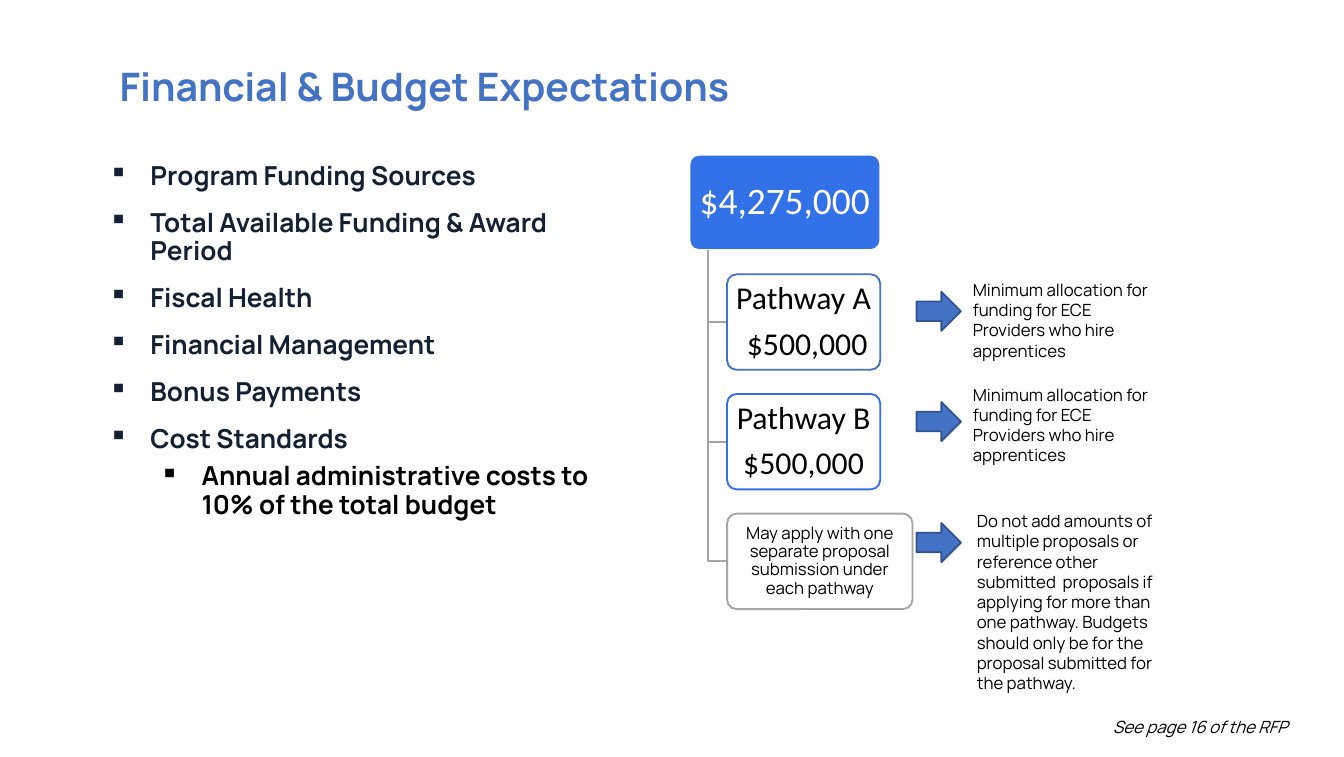
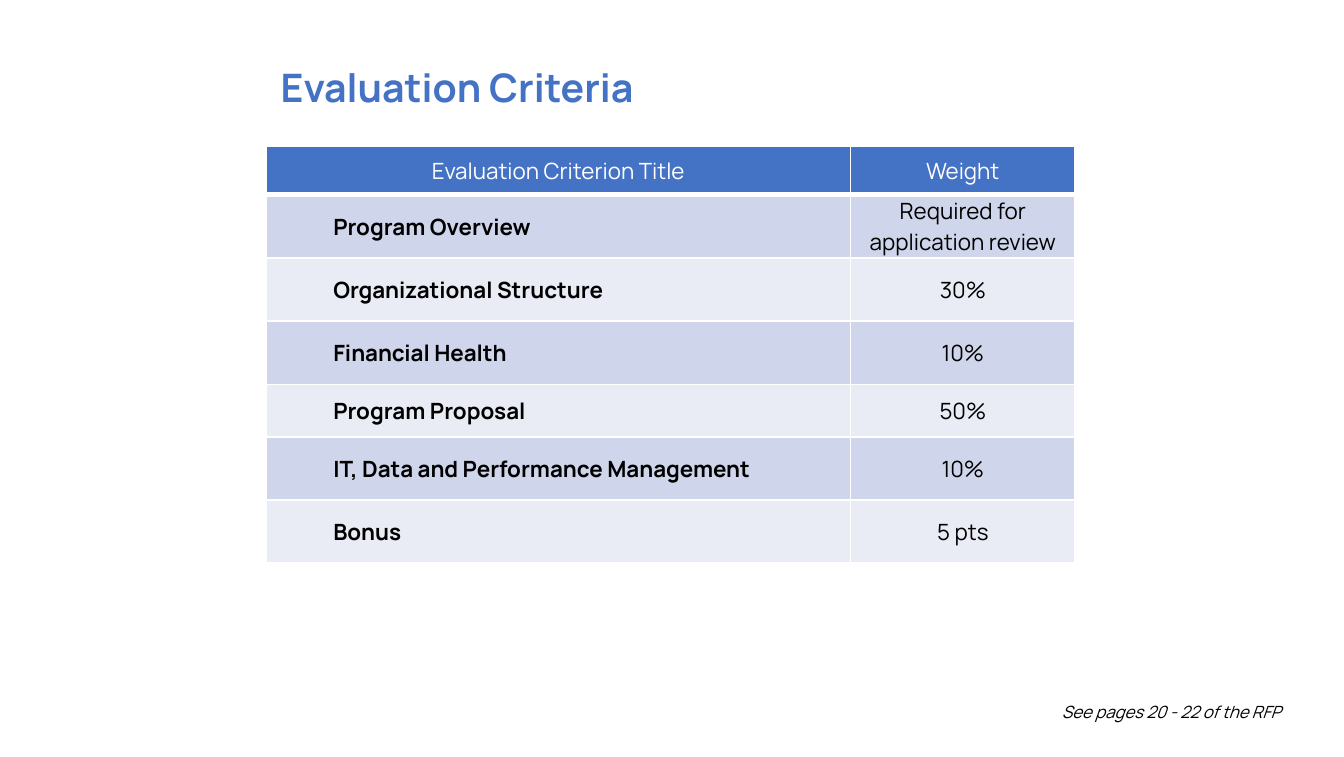
from lxml import etree
from pptx import Presentation
from pptx import util as u
from pptx.dml.color import RGBColor
from pptx.enum import shapes, text
from pptx.oxml import ns

BLUE, BRIGHT, GREY = "4472C4", "3271E7", "A5A5A5"
BLACK, WHITE, NAVY, EDGE = "000000", "FFFFFF", "142135", "325491"
BANDS = ["CFD5EA", "E9EBF5"]
CENTER = text.PP_ALIGN.CENTER
MIDDLE = text.MSO_ANCHOR.MIDDLE
GROW = text.MSO_AUTO_SIZE.SHAPE_TO_FIT_TEXT


def rgb(code):
    return RGBColor.from_string(code)


def write(frame, words, size=9, color=BLACK, font="Manrope", bold=False, italic=False,
          align=None, insets=(0.1, 0.05), line=None, before=None, after=None,
          level=0, margin=None, bullet=None):
    """Add one paragraph to the frame; an empty frame takes it as its first."""
    frame.word_wrap = True
    frame.margin_left = frame.margin_right = u.Inches(insets[0])
    frame.margin_top = frame.margin_bottom = u.Inches(insets[1])
    first = not frame.text
    para = frame.paragraphs[0] if first else frame.add_paragraph()
    para.level = level
    para.alignment = align
    para.line_spacing = line
    if before and not first:
        para.space_before = u.Pt(before)
    if after:
        para.space_after = u.Pt(after)
    properties = para._p.get_or_add_pPr()
    if margin:
        properties.set("marL", str(u.Inches(margin)))
        properties.set("indent", str(u.Inches(-0.31 if bullet else 0)))
    if bullet:
        etree.SubElement(properties, ns.qn("a:buChar")).set("char", bullet)
    span = para.add_run()
    span.text = words
    span.font.name, span.font.size = font, u.Pt(size)
    span.font.bold, span.font.italic = bold, italic
    span.font.color.rgb = rgb(color)


deck = Presentation()
deck.slide_width, deck.slide_height = u.Inches(10), u.Inches(5.63)

# Title and page reference of both slides
headings = [
    ("Financial & Budget Expectations", 0.81, 5.81, (0.08, 0.04),
     "See page 16 of the RFP", 8.2, 5.29),
    ("Evaluation Criteria", 1.99, 4.62, (0.1, 0.05),
     "See pages 20 - 22 of the RFP", 7.82, 5.18),
]
pages = []
for title, left, width, insets, reference, ref_left, ref_top in headings:
    page = deck.slides.add_slide(deck.slide_layouts[6])
    pages.append(page)
    box = page.shapes.add_textbox(u.Inches(left), u.Inches(0.42), u.Inches(width), u.Inches(0.44))
    write(box.text_frame, title, size=21, color=BLUE, bold=True, insets=insets)
    box.text_frame.auto_size = GROW
    box = page.shapes.add_textbox(u.Inches(ref_left), u.Inches(ref_top),
                                  u.Inches(10 - ref_left), u.Inches(0.23))
    write(box.text_frame, reference, italic=True, insets=(0.08, 0.04))
    box.text_frame.auto_size = GROW
budget, criteria = pages

# Budget topics
topics = ["Program Funding Sources", "Total Available Funding & Award Period", "Fiscal Health",
          "Financial Management", "Bonus Payments", "Cost Standards"]
box = budget.shapes.add_textbox(u.Inches(0.73), u.Inches(1.17), u.Inches(3.94), u.Inches(3.94))
topic_style = dict(size=14, bold=True, insets=(0.08, 0.04), line=0.9, bullet="▪")
for topic in topics:
    write(box.text_frame, topic, color=NAVY, before=10, margin=0.31, **topic_style)
write(box.text_frame, "Annual administrative costs to 10% of the total budget",
      before=5, level=1, margin=0.69, **topic_style)

# Funding tree: total on top, branches below
CARD_TOP, CARD_STEP, CARD_HEIGHT = 1.15, 0.89, 0.71
TRUNK, BRANCH = 5.27, 5.41
cards = [
    (["$4,275,000"], 5.13, 1.42, BRIGHT, WHITE, WHITE, 20, "Calibri", (0.04, 0.03)),
    (["Pathway A", " $500,000"], BRANCH, 1.14, WHITE, BLUE, BLACK, 17, "Calibri", (0.04, 0.02)),
    (["Pathway B", "$500,000"], BRANCH, 1.14, WHITE, BRIGHT, BLACK, 17, "Calibri", (0.04, 0.02)),
    (["May apply with one separate proposal submission under each pathway"],
     BRANCH, 1.38, WHITE, GREY, BLACK, 9, "Manrope", (0.02, 0.01)),
]
for row, (lines, left, width, fill, edge, color, size, font, insets) in enumerate(cards):
    top = CARD_TOP + row * CARD_STEP
    if row:
        middle = u.Inches(top + CARD_HEIGHT / 2)
        pen = budget.shapes.build_freeform(u.Inches(TRUNK), u.Inches(CARD_TOP + CARD_HEIGHT))
        pen.add_line_segments([(u.Inches(TRUNK), middle), (u.Inches(BRANCH), middle)], close=False)
        link = pen.convert_to_shape()
        link.shadow.inherit = False
        link.fill.background()
        link.line.color.rgb = rgb(GREY)
        link.line.width = u.Pt(1)
    card = budget.shapes.add_shape(shapes.MSO_SHAPE.ROUNDED_RECTANGLE, u.Inches(left),
                                   u.Inches(top), u.Inches(width), u.Inches(CARD_HEIGHT))
    card.adjustments[0] = 0.1
    card.shadow.inherit = False
    card.fill.solid()
    card.fill.fore_color.rgb = rgb(fill)
    if row:
        tint = card._element.spPr.find(ns.qn("a:solidFill"))[0]
        etree.SubElement(tint, ns.qn("a:alpha")).set("val", "90000")
    card.line.color.rgb = rgb(edge)
    card.line.width = u.Pt(1)
    card.text_frame.vertical_anchor = MIDDLE
    for words in lines:
        write(card.text_frame, words, size=size, color=color, font=font, align=CENTER,
              insets=insets, line=0.9, after=round(0.35 * size))

# Arrows and the remarks they point to
allocation = "Minimum allocation for funding for ECE Providers who hire apprentices"
remarks = [
    (allocation, 2.17, 7.14, 2.03, 1.57, 0.71),
    (allocation, 2.99, 7.14, 2.81, 1.64, 0.71),
    ("Do not add amounts of multiple proposals or reference other submitted  proposals if "
     "applying for more than one pathway. Budgets should only be for the proposal submitted "
     "for the pathway.", 3.89, 7.17, 3.75, 1.57, 1.62),
]
for words, arrow_top, *frame in remarks:
    box = budget.shapes.add_textbox(*map(u.Inches, frame))
    write(box.text_frame, words)
    box.text_frame.auto_size = GROW
    arrow = budget.shapes.add_shape(shapes.MSO_SHAPE.RIGHT_ARROW, u.Inches(6.82),
                                    u.Inches(arrow_top), u.Inches(0.33), u.Inches(0.29))
    arrow.shadow.inherit = False
    arrow.fill.solid()
    arrow.fill.fore_color.rgb = rgb(BLUE)
    arrow.line.color.rgb = rgb(EDGE)
    arrow.line.width = u.Pt(1)

# Criteria table
weights = [
    ("Evaluation Criterion Title", "Weight"),
    ("Program Overview", "Required for application review"),
    ("Organizational Structure", "30%"),
    ("Financial Health", "10%"),
    ("Program Proposal", "50%"),
    ("IT, Data and Performance Management", "10%"),
    ("Bonus", "5 pts"),
]
heights = [0.36, 0.47, 0.47, 0.47, 0.39, 0.47, 0.47]
grid = criteria.shapes.add_table(len(weights), 2, u.Inches(1.98), u.Inches(1.09),
                                 u.Inches(6.02), u.Inches(sum(heights))).table
for column, width in zip(grid.columns, [4.35, 1.67]):
    column.width = u.Inches(width)
for row, (entries, height) in enumerate(zip(weights, heights)):
    grid.rows[row].height = u.Inches(height)
    for column, words in enumerate(entries):
        cell = grid.cell(row, column)
        cell.vertical_anchor = MIDDLE
        cell.margin_left = cell.margin_right = cell.margin_top = cell.margin_bottom = 0
        for side in "LRTB":
            points = 3 if row == 0 and side == "B" else 1
            border = etree.SubElement(cell._tc.tcPr, ns.qn("a:ln" + side), w=str(u.Pt(points)))
            paint = etree.SubElement(border, ns.qn("a:solidFill"))
            etree.SubElement(paint, ns.qn("a:srgbClr"), val=WHITE)
        cell.fill.solid()
        cell.fill.fore_color.rgb = rgb(BANDS[(row - 1) % 2] if row else BLUE)
        name = row > 0 and column == 0
        write(cell.text_frame, words, size=12, color=BLACK if row else WHITE, bold=name,
              align=None if name else CENTER, insets=(0, 0),
              level=int(name), margin=0.5 if name else None)

deck.save("out.pptx")
